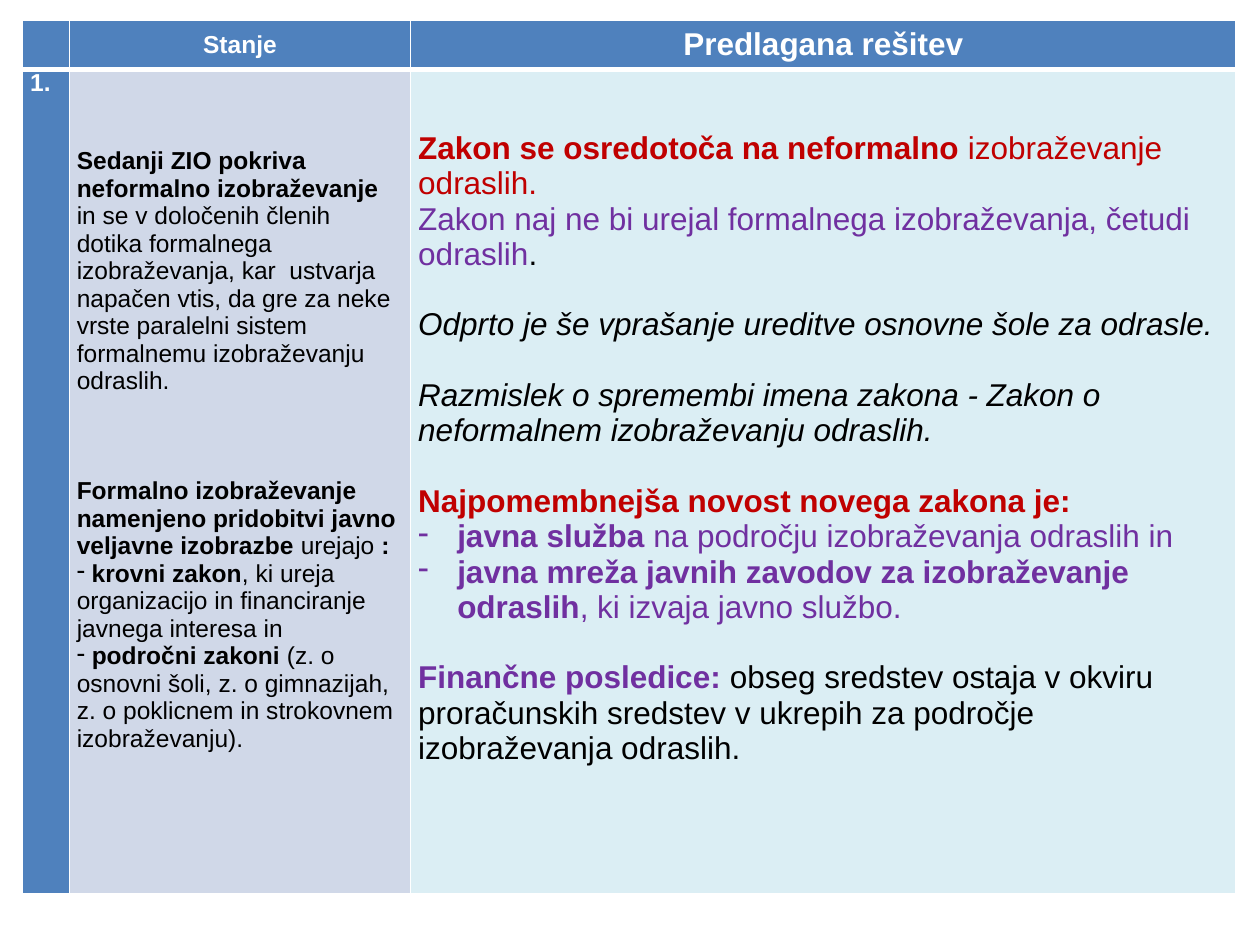
from lxml import etree
from pptx import Presentation
from pptx.dml.color import RGBColor
from pptx.enum.text import MSO_ANCHOR, PP_ALIGN
from pptx.oxml.ns import qn
from pptx.util import Inches, Pt

CENTER, LEFT = PP_ALIGN.CENTER, PP_ALIGN.LEFT
MIDDLE, TOP = MSO_ANCHOR.MIDDLE, MSO_ANCHOR.TOP
FONT = "Arial"
WHITE, BLACK, RED, PURPLE = "FFFFFF", "000000", "C00000", "7030A0"
BLUE, GREY_BLUE, PALE_BLUE = "4F81BD", "D0D8E8", "DBEEF4"
COLUMNS = (0.37, 2.71, 6.55)
ROWS = (0.39, 6.54)
SIDE_MARGIN = 0.06
SMALL, LARGE = 14, 18
SMALL_GAP, LARGE_GAP = 47, 20.2

CURRENT_STATE = [
    dict(runs=[("Sedanji ZIO pokriva neformalno izobraževanje ", dict(bold=True)),
               ("in se v določenih členih dotika formalnega izobraževanja, kar  ustvarja  "
                "napačen vtis, da gre za neke vrste paralelni sistem formalnemu "
                "izobraževanju odraslih.", {})]),
    dict(before=SMALL_GAP,
         runs=[("Formalno izobraževanje namenjeno pridobitvi javno veljavne izobrazbe ",
                dict(bold=True)),
               ("urejajo", {}), (" :", dict(bold=True))]),
    dict(bullet="-",
         runs=[(" krovni zakon", dict(bold=True)),
               (", ki ureja organizacijo in financiranje javnega interesa in", {})]),
    dict(bullet="-",
         runs=[(" ", {}), ("področni zakoni ", dict(bold=True)),
               ("(z. o osnovni šoli, z. o gimnazijah, z. o poklicnem in strokovnem "
                "izobraževanju).", {})]),
]
PROPOSAL = [
    dict(runs=[("Zakon se osredotoča na neformalno ", dict(color=RED, bold=True)),
               ("izobraževanje odraslih.", dict(color=RED))]),
    dict(runs=[("Zakon naj ne bi urejal formalnega izobraževanja, četudi  odraslih",
                dict(color=PURPLE)), (".", {})]),
    dict(before=LARGE_GAP,
         runs=[("Odprto je še vprašanje ureditve osnovne šole za odrasle.",
                dict(italic=True))]),
    dict(before=LARGE_GAP,
         runs=[("Razmislek o spremembi imena zakona - Zakon o neformalnem "
                "izobraževanju odraslih.", dict(italic=True))]),
    dict(before=LARGE_GAP,
         runs=[("Najpomembnejša novost novega zakona je:", dict(color=RED, bold=True))]),
    dict(bullet="-", indent=0.31,
         runs=[("javna služba ", dict(color=PURPLE, bold=True)),
               ("na področju izobraževanja odraslih in", dict(color=PURPLE))]),
    dict(bullet="-", indent=0.31,
         runs=[("javna mreža javnih zavodov za izobraževanje odraslih",
                dict(color=PURPLE, bold=True)),
               (", ki izvaja javno službo.", dict(color=PURPLE))]),
    dict(before=LARGE_GAP,
         runs=[("Finančne posledice: ", dict(color=PURPLE, bold=True)),
               ("obseg sredstev ostaja v okviru proračunskih sredstev v ukrepih za "
                "področje izobraževanja odraslih.", {})]),
]


def rgb(value):
    """Turn a hex string into a colour."""
    return RGBColor.from_string(value)


def add_text(paragraph, text, size=SMALL, color=BLACK, bold=False, italic=False):
    """Add one formatted run to a paragraph."""
    run = paragraph.add_run()
    run.text = text
    font = run.font
    font.name, font.size, font.bold, font.italic = FONT, Pt(size), bold, italic
    font.color.rgb = rgb(color)


def fill_paragraph(paragraph, runs, size, before=0, bullet=None, indent=0, align=LEFT):
    """Write the runs of a paragraph with its spacing and bullet."""
    paragraph.alignment = align
    paragraph.space_before = Pt(before)
    if bullet:
        properties = paragraph._p.get_or_add_pPr()
        properties.set("marL", str(Inches(indent)))
        properties.set("indent", str(-Inches(indent)))
        etree.SubElement(properties, qn("a:buChar")).set("char", bullet)
    for text, style in runs:
        add_text(paragraph, text, size=size, **style)


def add_borders(cell, bottom):
    """Draw white borders of one point, with the given bottom width."""
    properties = cell._tc.get_or_add_tcPr()
    for side, width in zip("LRTB", (1, 1, 1, bottom)):
        line = etree.SubElement(properties, qn(f"a:ln{side}"), w=str(Pt(width)))
        solid = etree.SubElement(line, qn("a:solidFill"))
        etree.SubElement(solid, qn("a:srgbClr"), val=WHITE)


def fill_cell(cell, paragraphs, fill, size=SMALL, anchor=TOP, top=0, bottom_border=1):
    """Set the borders, fill, margins and paragraphs of a cell."""
    add_borders(cell, bottom_border)
    cell.fill.solid()
    cell.fill.fore_color.rgb = rgb(fill)
    cell.margin_left = cell.margin_right = Inches(SIDE_MARGIN)
    cell.margin_top, cell.margin_bottom = Inches(top), 0
    cell.vertical_anchor = anchor
    frame = cell.text_frame
    for index, content in enumerate(paragraphs):
        paragraph = frame.add_paragraph() if index else frame.paragraphs[0]
        fill_paragraph(paragraph, size=size, **content)


def heading(text, align=CENTER):
    """Describe a single bold white paragraph."""
    return [dict(runs=[(text, dict(color=WHITE, bold=True))], align=align)]


def add_comparison_table(slide, left, top, width, height):
    """Place the table of the current state and the proposal in a box."""
    table = slide.shapes.add_table(len(ROWS), len(COLUMNS), Inches(left), Inches(top),
                                   Inches(width), Inches(height)).table
    table.horz_banding = False
    for column, share in zip(table.columns, COLUMNS):
        column.width = Inches(width * share / sum(COLUMNS))
    for row, share in zip(table.rows, ROWS):
        row.height = Inches(height * share / sum(ROWS))

    headers = (([], SMALL), (heading("Stanje"), SMALL),
               (heading("Predlagana rešitev"), LARGE))
    for index, (paragraphs, size) in enumerate(headers):
        fill_cell(table.cell(0, index), paragraphs, BLUE, size=size, anchor=MIDDLE,
                  bottom_border=3)
    fill_cell(table.cell(1, 0), heading("1.", LEFT), BLUE)
    fill_cell(table.cell(1, 1), CURRENT_STATE, GREY_BLUE, top=0.62)
    fill_cell(table.cell(1, 2), PROPOSAL, PALE_BLUE, size=LARGE, top=0.49)


def main():
    """Build and save the presentation."""
    presentation = Presentation()
    presentation.slide_width, presentation.slide_height = Inches(10), Inches(7.5)
    slide = presentation.slides.add_slide(presentation.slide_layouts[6])
    add_comparison_table(slide, 0.18, 0.16, sum(COLUMNS), sum(ROWS))
    presentation.save("out.pptx")


if __name__ == "__main__":
    main()
